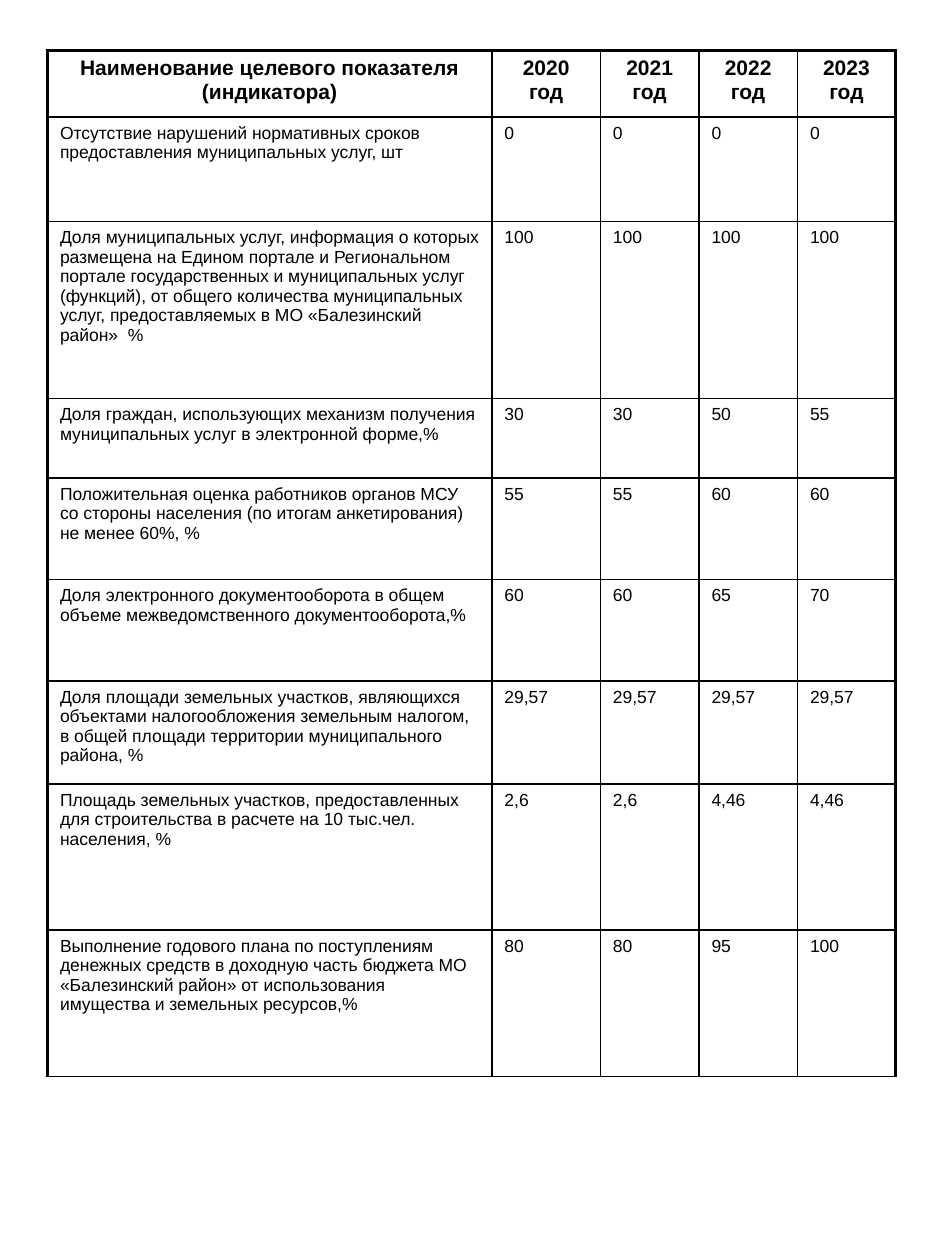
from lxml import etree
from pptx import Presentation
from pptx.dml.color import RGBColor
from pptx.enum.text import PP_ALIGN
from pptx.oxml.ns import qn
from pptx.util import Pt

CENTER, LEFT = PP_ALIGN.CENTER, PP_ALIGN.LEFT
BLACK = "000000"
THIN, THICK = 1, 2.25
COLUMN_WIDTHS = [254, 62, 56.3, 56.3, 56]
ROW_HEIGHTS = [38, 59.7, 101.2, 45.4, 58, 58, 58.9, 83.5, 83.5]
ROWS = [
    ["Наименование целевого показателя (индикатора)", "2020 год", "2021 год", "2022 год", "2023 год"],
    ["Отсутствие нарушений нормативных сроков предоставления муниципальных услуг, шт",
     "0", "0", "0", "0"],
    ["Доля муниципальных услуг, информация о которых размещена на Едином портале и "
     "Региональном портале государственных и муниципальных услуг (функций), от общего "
     "количества муниципальных услуг, предоставляемых в МО «Балезинский район»  %",
     "100", "100", "100", "100"],
    ["Доля граждан, использующих механизм получения муниципальных услуг в электронной форме,%",
     "30", "30", "50", "55"],
    ["Положительная оценка работников органов МСУ со стороны населения "
     "(по итогам анкетирования) не менее 60%, %",
     "55", "55", "60", "60"],
    ["Доля электронного документооборота в общем объеме межведомственного документооборота,%",
     "60", "60", "65", "70"],
    ["Доля площади земельных участков, являющихся объектами налогообложения земельным "
     "налогом, в общей площади территории муниципального района, %",
     "29,57", "29,57", "29,57", "29,57"],
    ["Площадь земельных участков, предоставленных для строительства в расчете на "
     "10 тыс.чел. населения, %",
     "2,6", "2,6", "4,46", "4,46"],
    ["Выполнение годового плана по поступлениям денежных средств в доходную часть бюджета "
     "МО «Балезинский район» от использования имущества и земельных ресурсов,%",
     "80", "80", "95", "100"],
]


def color(value):
    return RGBColor.from_string(value)


def add_border(cell, side, width):
    line = etree.SubElement(cell._tc.get_or_add_tcPr(), qn(f"a:ln{side}"), w=str(Pt(width)))
    fill = etree.SubElement(line, qn("a:solidFill"))
    etree.SubElement(fill, qn("a:srgbClr"), val=BLACK)


presentation = Presentation()
presentation.slide_width = Pt(540)
presentation.slide_height = Pt(720)
slide = presentation.slides.add_slide(presentation.slide_layouts[6])

table = slide.shapes.add_table(
    len(ROWS), len(COLUMN_WIDTHS), Pt(27.1), Pt(28.9),
    Pt(sum(COLUMN_WIDTHS)), Pt(sum(ROW_HEIGHTS)),
).table
table.first_row = False
table.horz_banding = False
for column, width in zip(table.columns, COLUMN_WIDTHS):
    column.width = Pt(width)

last_column = len(COLUMN_WIDTHS) - 1
for row_index, texts in enumerate(ROWS):
    table.rows[row_index].height = Pt(ROW_HEIGHTS[row_index])
    is_header = row_index == 0
    for column_index, text in enumerate(texts):
        cell = table.cell(row_index, column_index)
        cell.text = text
        paragraph = cell.text_frame.paragraphs[0]
        paragraph.alignment = CENTER if is_header else LEFT
        paragraph.font.name = "Arial"
        paragraph.font.size = Pt(12 if is_header else 10)
        paragraph.font.bold = is_header
        paragraph.font.color.rgb = color(BLACK)
        add_border(cell, "L", THICK if column_index == 0 else THIN)
        add_border(cell, "R", THICK if column_index == last_column else THIN)
        add_border(cell, "T", THICK if is_header else THIN)
        add_border(cell, "B", THIN)
        cell.fill.background()

presentation.save("out.pptx")
